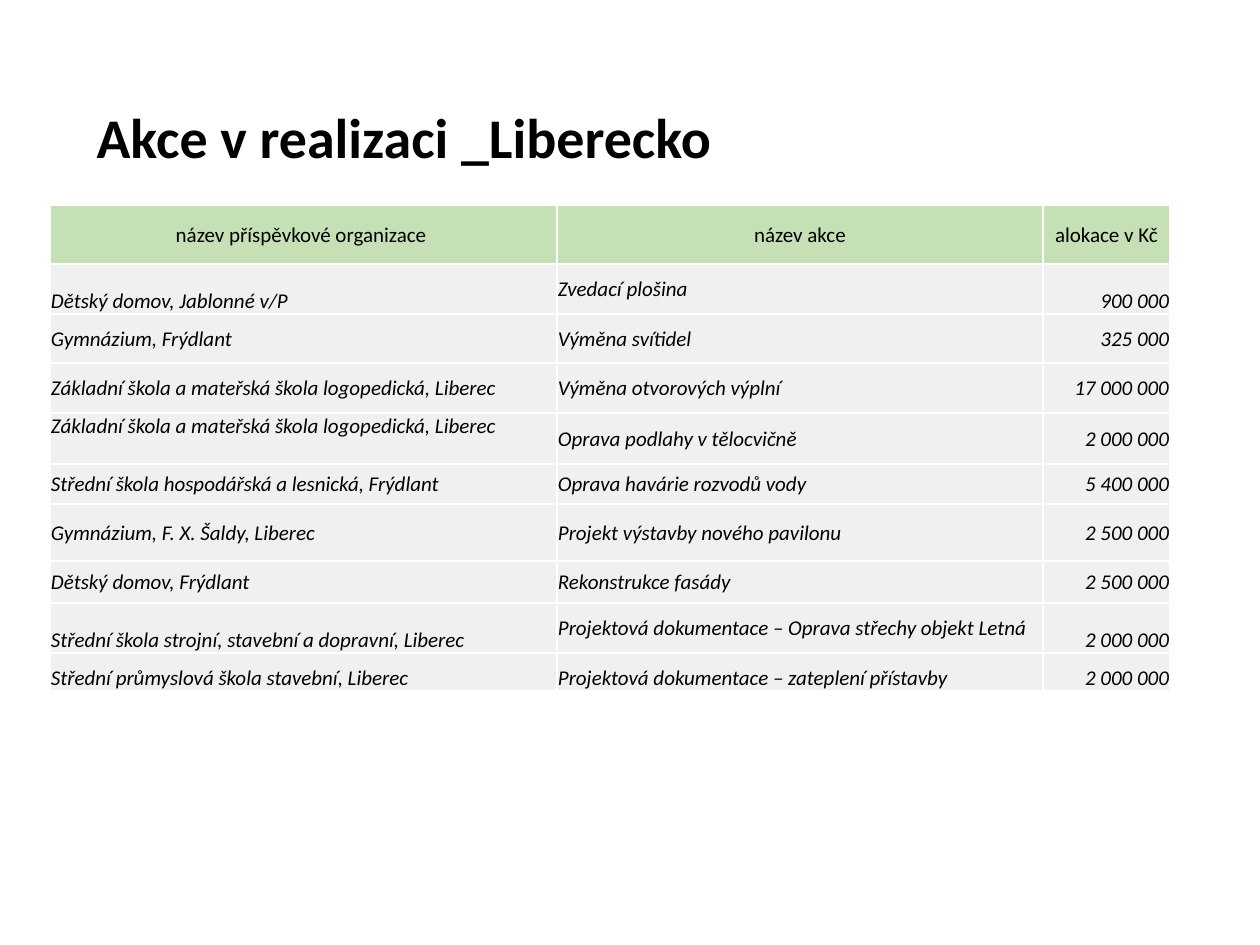
"""Build the slide listing school projects under way in the Liberec area."""
from lxml.etree import SubElement
from pptx import Presentation
from pptx.dml.color import RGBColor
from pptx.enum.text import MSO_ANCHOR, MSO_AUTO_SIZE, PP_ALIGN
from pptx.oxml.ns import qn
from pptx.util import Emu, Pt

BLACK = RGBColor(0x00, 0x00, 0x00)
GREEN = RGBColor(0xC5, 0xE0, 0xB4)
GREY = RGBColor(0xF0, 0xF0, 0xF0)
FONT = "Calibri"
TOP, MIDDLE, BOTTOM = MSO_ANCHOR.TOP, MSO_ANCHOR.MIDDLE, MSO_ANCHOR.BOTTOM

COLUMN_WIDTHS = [507, 486, 127]
ROWS = [
    (59, "název příspěvkové organizace ", "název akce", "alokace v Kč"),
    (50, "Dětský domov, Jablonné v/P", "Zvedací plošina", "900 000"),
    (49, "Gymnázium, Frýdlant", "Výměna svítidel", "325 000"),
    (50, "Základní škola a mateřská škola logopedická, Liberec", "Výměna otvorových výplní", "17 000 000"),
    (51, "Základní škola a mateřská škola logopedická, Liberec", "Oprava podlahy v tělocvičně", "2 000 000"),
    (40, "Střední škola hospodářská a lesnická, Frýdlant", "Oprava havárie rozvodů vody", "5 400 000"),
    (57, "Gymnázium, F. X. Šaldy, Liberec", "Projekt výstavby nového pavilonu", "2 500 000"),
    (42, "Dětský domov, Frýdlant", "Rekonstrukce fasády", "2 500 000"),
    (50, "Střední škola strojní, stavební a dopravní, Liberec",
     "Projektová dokumentace – Oprava střechy objekt Letná", "2 000 000"),
    (38, "Střední průmyslová škola stavební, Liberec",
     "Projektová dokumentace – zateplení přístavby", "2 000 000"),
]
ROW_ANCHORS = {
    1: (BOTTOM, MIDDLE, BOTTOM),
    4: (TOP, MIDDLE, MIDDLE),
    8: (BOTTOM, MIDDLE, BOTTOM),
    9: (BOTTOM, BOTTOM, BOTTOM),
}
BODY_ALIGNMENTS = [PP_ALIGN.LEFT, PP_ALIGN.LEFT, PP_ALIGN.RIGHT]


def px(length):
    return Emu(round(length * 914400 / 126))


def add_white_borders(cell):
    properties = cell._tc.get_or_add_tcPr()
    for side in ("lnL", "lnR", "lnT", "lnB"):
        line = SubElement(properties, qn(f"a:{side}"), w=str(Pt(1)))
        fill = SubElement(line, qn("a:solidFill"))
        SubElement(fill, qn("a:srgbClr"), val="FFFFFF")


deck = Presentation()
deck.slide_width, deck.slide_height = px(1260), px(945)
page = deck.slides.add_slide(deck.slide_layouts[5])

title = page.shapes.title
title.left, title.top, title.width, title.height = px(84), px(96), px(1052), px(81)
title.text_frame.word_wrap = True
title.text_frame.auto_size = MSO_AUTO_SIZE.SHAPE_TO_FIT_TEXT
title.text_frame.vertical_anchor = TOP
para = title.text_frame.paragraphs[0]
para.alignment = PP_ALIGN.LEFT
span = para.add_run()
span.text = "Akce v realizaci _Liberecko"
span.font.name, span.font.size, span.font.bold = FONT, Pt(32), True
span.font.color.rgb = BLACK

table_height = sum(row[0] for row in ROWS)
table = page.shapes.add_table(
    len(ROWS), len(COLUMN_WIDTHS), px(50), px(205), px(sum(COLUMN_WIDTHS)), px(table_height)
).table
table.horz_banding = False
for column, width in zip(table.columns, COLUMN_WIDTHS):
    column.width = px(width)

for row_index, (height, *texts) in enumerate(ROWS):
    table.rows[row_index].height = px(height)
    is_header = row_index == 0
    anchors = ROW_ANCHORS.get(row_index, (MIDDLE, MIDDLE, MIDDLE))
    for column_index, text in enumerate(texts):
        cell = table.cell(row_index, column_index)
        add_white_borders(cell)
        cell.fill.solid()
        cell.fill.fore_color.rgb = GREEN if is_header else GREY
        cell.margin_left = cell.margin_right = cell.margin_top = px(1)
        cell.margin_bottom = 0
        cell.vertical_anchor = anchors[column_index]
        para = cell.text_frame.paragraphs[0]
        para.alignment = PP_ALIGN.CENTER if is_header else BODY_ALIGNMENTS[column_index]
        span = para.add_run()
        span.text = text
        span.font.name, span.font.size = FONT, Pt(12)
        span.font.bold, span.font.italic = False, not is_header
        span.font.color.rgb = BLACK

deck.save("out.pptx")
